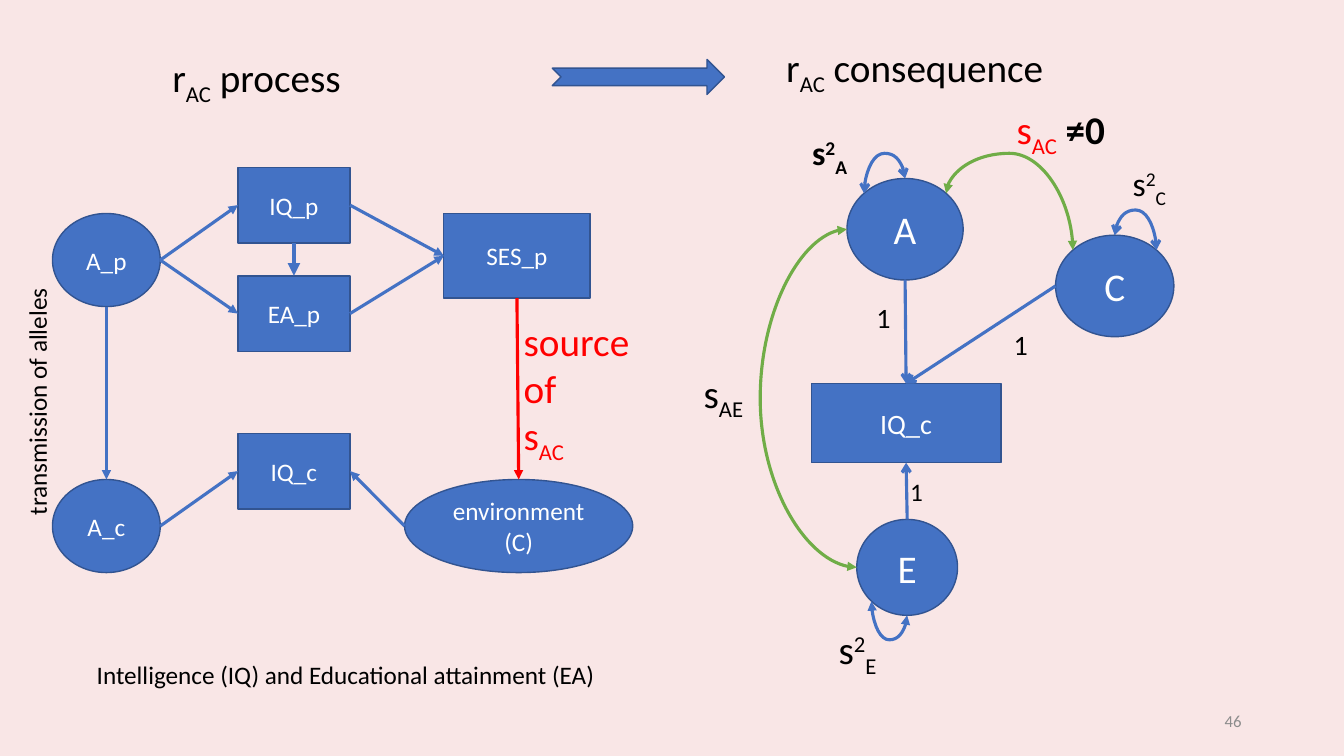
from pptx import Presentation
from pptx.dml.color import RGBColor
from pptx.enum.shapes import MSO_CONNECTOR as LINK, MSO_SHAPE as SHAPE
from pptx.enum.text import MSO_ANCHOR as ANCHOR, PP_ALIGN as ALIGN
from pptx.oxml.ns import qn
from pptx.util import Pt
from lxml.etree import SubElement

BACKDROP, BLUE, OUTLINE, GREEN = "F9E6E6", "4472C4", "325491", "70AD47"
RED, BLACK, WHITE, GREY = "FF0000", "000000", "FFFFFF", "8C8C8C"
FONT = "Calibri"
SUB, SUP = -25, 30
TOP, LEFT, BOTTOM, RIGHT = range(4)
TOP_LEFT, TOP_RIGHT, BOTTOM_LEFT = 4, 5, 6

# Nodes: key -> (outline, left, top, width, height, text size, label)
NODES = {
    "IQ parent": (SHAPE.RECTANGLE, 170, 119.5, 80, 54, 18, "IQ_p"),
    "EA parent": (SHAPE.RECTANGLE, 170, 197, 80, 54, 18, "EA_p"),
    "IQ child": (SHAPE.RECTANGLE, 170, 309.5, 80, 54, 18, "IQ_c"),
    "A parent": (SHAPE.OVAL, 37.5, 152.5, 77, 66.5, 18, "A_p"),
    "A child": (SHAPE.OVAL, 37.5, 342.5, 77, 66.5, 18, "A_c"),
    "environment": (SHAPE.OVAL, 289, 342.5, 163, 66.5, 18, "environment\n(C)"),
    "SES parent": (SHAPE.RECTANGLE, 317, 152.5, 104.5, 60.5, 18, "SES_p"),
    "A": (SHAPE.OVAL, 605, 127.5, 83, 72.5, 28, "A"),
    "C": (SHAPE.OVAL, 754, 168, 84.5, 72.5, 28, "C"),
    "E": (SHAPE.OVAL, 612, 371, 72, 68.5, 28, "E"),
    "IQ outcome": (SHAPE.RECTANGLE, 579.5, 274, 135.5, 56.5, 20, "IQ_c"),
}

# Straight arrows: (from, side, to, side, colour, width, arrowhead)
ARROWS = [
    ("A parent", RIGHT, "IQ parent", LEFT, BLUE, 2.25, "triangle"),
    ("A parent", RIGHT, "EA parent", LEFT, BLUE, 2.25, "triangle"),
    ("IQ parent", BOTTOM, "EA parent", TOP, BLUE, 3, "triangle"),
    ("A child", RIGHT, "IQ child", LEFT, BLUE, 2.25, "triangle"),
    ("A parent", BOTTOM, "A child", TOP, BLUE, 2.25, "triangle"),
    ("IQ parent", RIGHT, "SES parent", LEFT, BLUE, 2.25, "triangle"),
    ("EA parent", RIGHT, "SES parent", LEFT, BLUE, 2.25, "triangle"),
    ("environment", LEFT, "IQ child", RIGHT, BLUE, 2.25, "triangle"),
    ("SES parent", BOTTOM, "environment", TOP, RED, 2.25, "triangle"),
    ("A", BOTTOM, "IQ outcome", TOP, BLUE, 2.25, "arrow"),
    ("C", LEFT, "IQ outcome", TOP, BLUE, 2.25, "arrow"),
    ("E", TOP, "IQ outcome", BOTTOM, BLUE, 2.25, "arrow"),
]

# Double-headed curves: (from, side, to, side, axis, outermost x or y, colour, arrowhead)
CURVES = [
    ("A", TOP, "A", TOP_LEFT, "y", 109.5, BLUE, "arrow"),
    ("C", TOP_RIGHT, "C", TOP, "y", 150, BLUE, "arrow"),
    ("E", BOTTOM, "E", BOTTOM_LEFT, "y", 457, BLUE, "triangle"),
    ("A", TOP_RIGHT, "C", TOP_LEFT, "y", 109.5, GREEN, "triangle"),
    ("A", LEFT, "E", LEFT, "x", 543, GREEN, "triangle"),
]

# Texts: (left, top, width, height, size, rotation, paragraphs);
# a run is (text, baseline, colour, bold)
TEXTS = [
    (116, 34.5, 139, 41, 28, 0, [[("r",), ("AC", SUB), (" process",)]]),
    (554.5, 27.5, 203, 41, 28, 0, [[("r",), ("AC", SUB), (" consequence",)]]),
    (573, 91, 64, 36, 24, 0,
     [[("s", 0, BLACK, True), ("2", SUP, BLACK, True), ("A", SUB, BLACK, True)]]),
    (802, 113, 41, 36, 24, 0, [[("s",), ("2", SUP), ("C", SUB)]]),
    (592, 443, 55.5, 41, 28, 0, [[("s",), ("2", SUP), ("E", SUB)]]),
    (495.5, 260, 45.5, 41, 28, 0, [[("s",), ("AE", SUB)]]),
    (719, 72, 81.5, 41, 28, 0,
     [[("s", 0, RED), ("AC", SUB, RED), (" ≠0", 0, BLACK, True)]]),
    (619, 211, 33, 31.5, 20, 0, [[("1",)]]),
    (717, 230.5, 33, 31.5, 20, 0, [[("1",)]]),
    (643, 336.5, 33, 29, 18, 0, [[("1",)]]),
    (367, 223, 97, 109, 28, 0,
     [[("source", 0, RED)], [("of", 0, RED)], [("s", 0, RED), ("AC", SUB, RED)]]),
    (62, 467.5, 375, 29, 18, 0,
     [[("Intelligence (IQ) and Educational attainment (EA)",)]]),
    (-62.5, 271.5, 178, 29, 18, 270, [[("transmission of alleles",)]]),
]
PAGE_NUMBER = "46"


def colour(code):
    return RGBColor.from_string(code)


def style(run, size, code, bold=False, baseline=0):
    font = run.font
    font.name, font.size, font.bold = FONT, Pt(size), bold
    font.color.rgb = colour(code)
    if baseline:
        run._r.get_or_add_rPr().set("baseline", str(baseline * 1000))


def add_block(kind, left, top, width, height):
    block = slide.shapes.add_shape(kind, Pt(left), Pt(top), Pt(width), Pt(height))
    block.shadow.inherit = False
    block.fill.solid()
    block.fill.fore_color.rgb = colour(BLUE)
    block.line.color.rgb = colour(OUTLINE)
    block.line.width = Pt(1)
    return block


def add_text(left, top, width, height):
    return slide.shapes.add_textbox(Pt(left), Pt(top), Pt(width), Pt(height))


def site(key, side):
    """Point on a node: the middle of a side, or a diagonal point of its ellipse."""
    left, top, width, height = NODES[key][1:5]
    across, down = {
        TOP: (0, -1), LEFT: (-1, 0), BOTTOM: (0, 1), RIGHT: (1, 0),
        TOP_LEFT: (-.707, -.707), TOP_RIGHT: (.707, -.707), BOTTOM_LEFT: (-.707, .707),
    }[side]
    return left + width / 2 * (1 + across), top + height / 2 * (1 + down)


def add_link(kind, start, end, code, width, heads):
    link = slide.shapes.add_connector(kind, *(Pt(v) for v in start + end))
    link.line.color.rgb = colour(code)
    link.line.width = Pt(width)
    line = link.line._get_or_add_ln()
    for tag, head in heads:
        SubElement(line, qn(tag), type=head)
    SubElement(link._element.spPr, qn("a:effectLst"))
    return link


def add_curve(start, end, axis, reach, code, head):
    link = add_link(LINK.CURVE, start, end, code, 2.25,
                    [("a:headEnd", head), ("a:tailEnd", head)])
    (x1, y1), (x2, y2) = start, end
    frame = link._element.spPr.find(qn("a:xfrm"))
    if axis == "y":  # the frame is turned a quarter, so its sides swap
        bend = (reach - y1) / (y2 - y1)
        width, height = abs(y2 - y1), abs(x2 - x1)
        flips = {"flipH": y2 < y1, "flipV": x2 > x1}
        link.left, link.top = Pt((x1 + x2 - width) / 2), Pt((y1 + y2 - height) / 2)
        link.width, link.height = Pt(width), Pt(height)
        frame.set("rot", str(90 * 60000))
    else:
        bend = (reach - x1) / (x2 - x1)
        flips = {"flipH": x2 < x1, "flipV": y2 < y1}
    for flip, on in flips.items():
        frame.set(flip, str(int(on)))
    outline = link._element.spPr.find(qn("a:prstGeom"))
    guides = outline.find(qn("a:avLst"))
    if guides is None:
        guides = SubElement(outline, qn("a:avLst"))
    SubElement(guides, qn("a:gd"), name="adj1", fmla=f"val {round(bend * 100000)}")


deck = Presentation()
deck.slide_width, deck.slide_height = Pt(960), Pt(540)
slide = deck.slides.add_slide(deck.slide_layouts[6])
slide.background.fill.solid()
slide.background.fill.fore_color.rgb = colour(BACKDROP)

# Nodes of both diagrams
blocks = {}
for key, (kind, left, top, width, height, size, label) in NODES.items():
    block = blocks[key] = add_block(kind, left, top, width, height)
    block.text_frame.text = label
    block.text_frame.vertical_anchor = ANCHOR.MIDDLE
    for paragraph in block.text_frame.paragraphs:
        paragraph.alignment = ALIGN.CENTER
        style(paragraph.runs[0], size, WHITE)

# Straight arrows, joined to the rectangles
for source, out_side, target, in_side, code, width, head in ARROWS:
    arrow = add_link(LINK.STRAIGHT, site(source, out_side), site(target, in_side),
                     code, width, [("a:tailEnd", head)])
    if NODES[source][0] == SHAPE.RECTANGLE:
        arrow.begin_connect(blocks[source], out_side)
    if NODES[target][0] == SHAPE.RECTANGLE:
        arrow.end_connect(blocks[target], in_side)

# Variance loops and covariance curves
for source, out_side, target, in_side, axis, reach, code, head in CURVES:
    add_curve(site(source, out_side), site(target, in_side), axis, reach, code, head)

# Arrow from process to consequence
add_block(SHAPE.NOTCHED_RIGHT_ARROW, 394.5, 42.5, 123, 25)

# Headings, path labels and captions
for left, top, width, height, size, rotation, paragraphs in TEXTS:
    label = add_text(left, top, width, height)
    label.rotation = rotation
    for index, runs in enumerate(paragraphs):
        frame = label.text_frame
        paragraph = frame.add_paragraph() if index else frame.paragraphs[0]
        for text, *look in runs:
            baseline, code, bold = look + [0, BLACK, False][len(look):]
            run = paragraph.add_run()
            run.text = text
            style(run, size, code, bold, baseline)

# Page number
number = add_text(678, 500.5, 216, 29).text_frame
number.text = PAGE_NUMBER
number.word_wrap = True
number.vertical_anchor = ANCHOR.MIDDLE
number.paragraphs[0].alignment = ALIGN.RIGHT
style(number.paragraphs[0].runs[0], 12, GREY)

deck.save("out.pptx")
